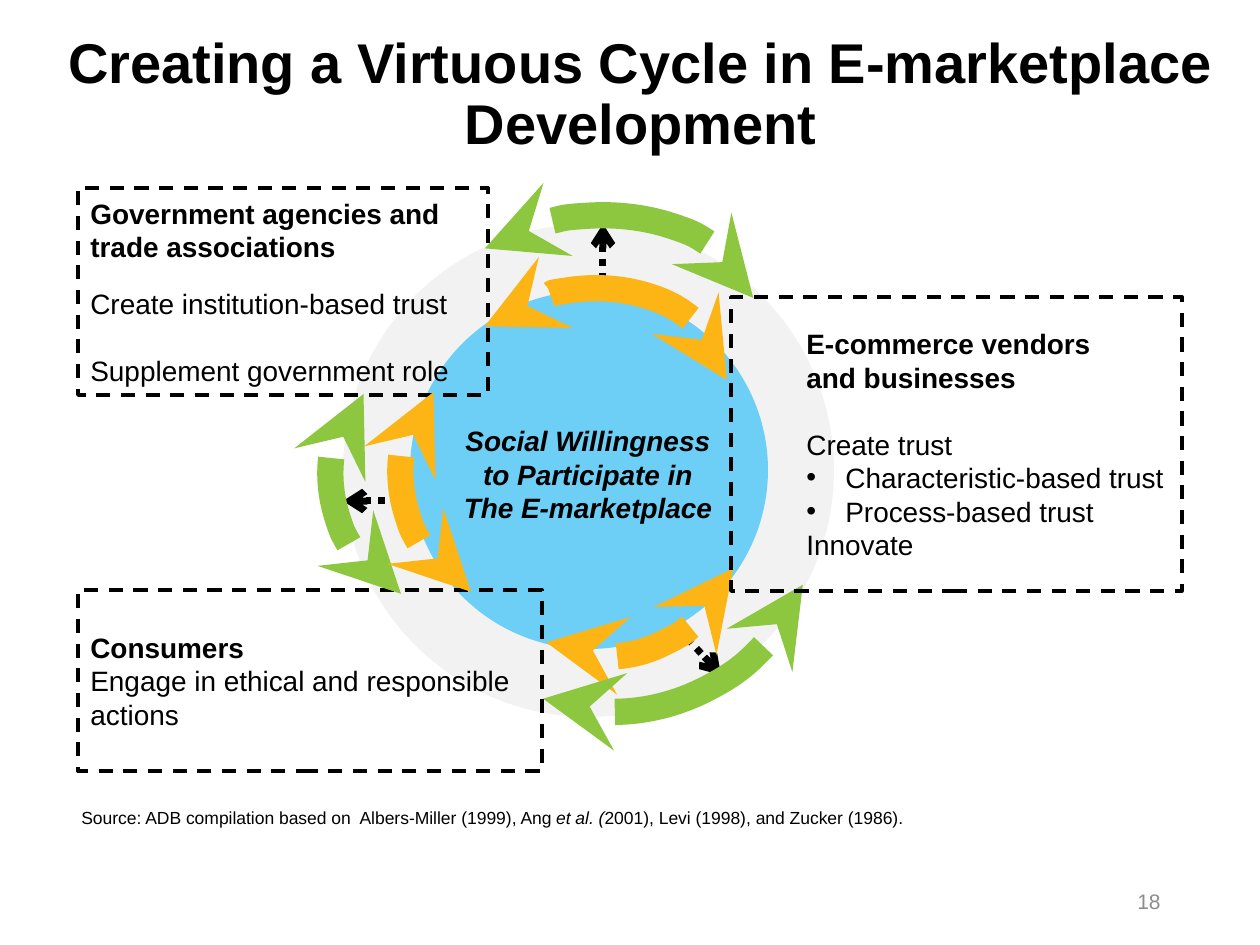
from lxml import etree
from pptx import Presentation
from pptx.dml.color import RGBColor
from pptx.enum.dml import MSO_LINE
from pptx.enum.shapes import MSO_CONNECTOR, MSO_SHAPE
from pptx.enum.text import MSO_ANCHOR, PP_ALIGN
from pptx.oxml.ns import qn
from pptx.util import Pt

PX = 914400 // 126
FONT = "Arial"
LEFT, MID, RIGHT = PP_ALIGN.LEFT, PP_ALIGN.CENTER, PP_ALIGN.RIGHT
TOP, CENTER = MSO_ANCHOR.TOP, MSO_ANCHOR.MIDDLE
DASH, DOT = MSO_LINE.DASH, MSO_LINE.ROUND_DOT
OVAL, RECT, ARC = MSO_SHAPE.OVAL, MSO_SHAPE.RECTANGLE, MSO_SHAPE.ARC
COLORS = {"ink": "000000", "gray": "8C8C8C", "pale": "F2F2F2",
          "blue": "6DCFF6", "gold": "FDB515", "green": "8DC63F"}

# Content: a line is (text, style, space before in pt, indent, bullet)
TITLE = "Creating a Virtuous Cycle in E-marketplace Development"
CORE = ["Social Willingness", "to Participate in", "The E-marketplace"]
SOURCE = [("Source: ADB compilation based on  Albers‐Miller (1999), Ang ", ""),
          ("et al. (", "i"),
          ("2001), Levi (1998), and Zucker (1986).", "")]
PAGE = "18"
TAB, HANG = 63, 39
ACTORS = [
    ((78, 590, 464, 181), [
        ("Consumers", "b", 0, 0, False),
        ("Engage in ethical and responsible actions", "", 0, 0, False)]),
    ((78, 188, 410, 207), [
        ("Government agencies and", "b", 0, 0, False),
        ("trade associations", "b", 0, 0, False),
        ("Create institution-based trust", "", 13, 0, False),
        ("Supplement government role", "", 19, 0, False)]),
    ((731, 297, 451, 294), [
        ("E-commerce vendors", "b", 0, TAB, False),
        ("and businesses", "b", 0, TAB, False),
        ("Create trust", "", 19, TAB, False),
        ("Characteristic-based trust", "", 0, TAB + HANG, True),
        ("Process-based trust", "", 0, TAB + HANG, True),
        ("Innovate", "", 0, TAB, False)]),
]

# Geometry: discs, outward arrows (from, to), arcs (box, turn, degrees)
DISCS = [((343, 224, 491, 493), "pale"), ((410, 291, 358, 358), "blue")]
RAYS = [(603, 280, 603, 224), (687, 638, 721, 675), (399, 501, 343, 501)]
ARCS = [
    ((513, 423, 212, 248), 243, (295.69, 52.37), "gold"),
    ((333, 377, 173, 226), 343, (283.26, 62.93), "green"),
    ((486, 163, 218, 323), 86.5, (276.06, 51.84), "green"),
    ((467, 355, 329, 375), 243, (303.52, 49.15), "green"),
    ((403, 375, 173, 226), 343, (283.26, 62.93), "gold"),
    ((476, 255, 218, 286), 81.7, (268.97, 46.12), "gold"),
]

deck = Presentation()
deck.slide_width, deck.slide_height = 1260 * PX, 945 * PX
slide = deck.slides.add_slide(deck.slide_layouts[6])
shapes = slide.shapes


def color(name):
    return RGBColor.from_string(COLORS[name])


def emu(box):
    return [n * PX for n in box]


def style(run, size, look="", ink="ink"):
    font = run.font
    font.name, font.size = FONT, Pt(size)
    font.bold, font.italic = "b" in look, "i" in look
    font.color.rgb = color(ink)


def frame(shape, anchor):
    body = shape.text_frame
    body.word_wrap = True
    body.vertical_anchor = anchor
    return body


def label(box, lines, size, look="", align=LEFT, anchor=CENTER, ink="ink"):
    body = frame(shapes.add_textbox(*emu(box)), anchor)
    body.text = "\n".join(lines)
    for para in body.paragraphs:
        para.alignment = align
        for run in para.runs:
            style(run, size, look, ink)
    return body


def add_shape(kind, box, fill=None):
    shape = shapes.add_shape(kind, *emu(box))
    shape.shadow.inherit = False
    if fill:
        shape.fill.solid()
        shape.fill.fore_color.rgb = color(fill)
        shape.line.fill.background()
    else:
        shape.fill.background()
    return shape


def stroke(line, ink, width, dash=None):
    line.color.rgb = color(ink)
    line.width = Pt(width)
    if dash:
        line.dash_style = dash


def tips(shape, kind, *ends):
    line = shape.line._get_or_add_ln()
    for end in ends:
        etree.SubElement(line, qn("a:" + end)).set("type", kind)


def indent(para, left, bullet):
    props = para._p.get_or_add_pPr()
    props.set("marL", str(left * PX))
    props.set("indent", str(-HANG * PX if bullet else 0))
    if bullet:
        etree.SubElement(props, qn("a:buFont")).set("typeface", FONT)
        etree.SubElement(props, qn("a:buChar")).set("char", "•")
    else:
        etree.SubElement(props, qn("a:buNone"))


def add_actor(box, lines):
    shape = add_shape(RECT, box)
    stroke(shape.line, "ink", 2, DASH)
    body = frame(shape, CENTER)
    body.text = "\n".join(line[0] for line in lines)
    for para, (_, look, gap, left, bullet) in zip(body.paragraphs, lines):
        indent(para, left, bullet)
        para.alignment = LEFT
        if gap:
            para.space_before = Pt(gap)
        style(para.runs[0], 16, look)


def add_ray(ends):
    ray = shapes.add_connector(MSO_CONNECTOR.STRAIGHT, *emu(ends))
    stroke(ray.line, "ink", 4, DOT)
    tips(ray, "arrow", "tailEnd")
    etree.SubElement(ray._element.spPr, qn("a:effectLst"))


def add_arc(box, turn, sweep, ink):
    arc = add_shape(ARC, box)
    for i, angle in enumerate(sweep):
        arc.adjustments[i] = angle * 0.6  # 60000 units a degree, per 100000
    arc.rotation = turn
    arc._element.spPr.xfrm.set("flipH", "1")
    stroke(arc.line, ink, 15)
    tips(arc, "stealth", "headEnd", "tailEnd")


# Title, page number and source
head = label((41, 34, 1200, 124), [TITLE], 32, "b", MID)
head.paragraphs[0].line_spacing = 0.9
label((1065, 876, 108, 50), [PAGE], 12, align=RIGHT, ink="gray")
note = label((69, 799, 946, 34), [], 10, anchor=TOP).paragraphs[0]
note.line_spacing = 1.07
for text, look in SOURCE:
    run = note.add_run()
    run.text = text
    style(run, 10, look)

# Cycle, from back to front
for box, fill in DISCS:
    add_shape(OVAL, box, fill)
for actor in ACTORS[:2]:
    add_actor(*actor)
for ends in RAYS:
    add_ray(ends)
for arc in ARCS[:4]:
    add_arc(*arc)
add_actor(*ACTORS[2])
label((416, 389, 344, 170), CORE, 16, "bi", MID)
for arc in ARCS[4:]:
    add_arc(*arc)

deck.save("out.pptx")
